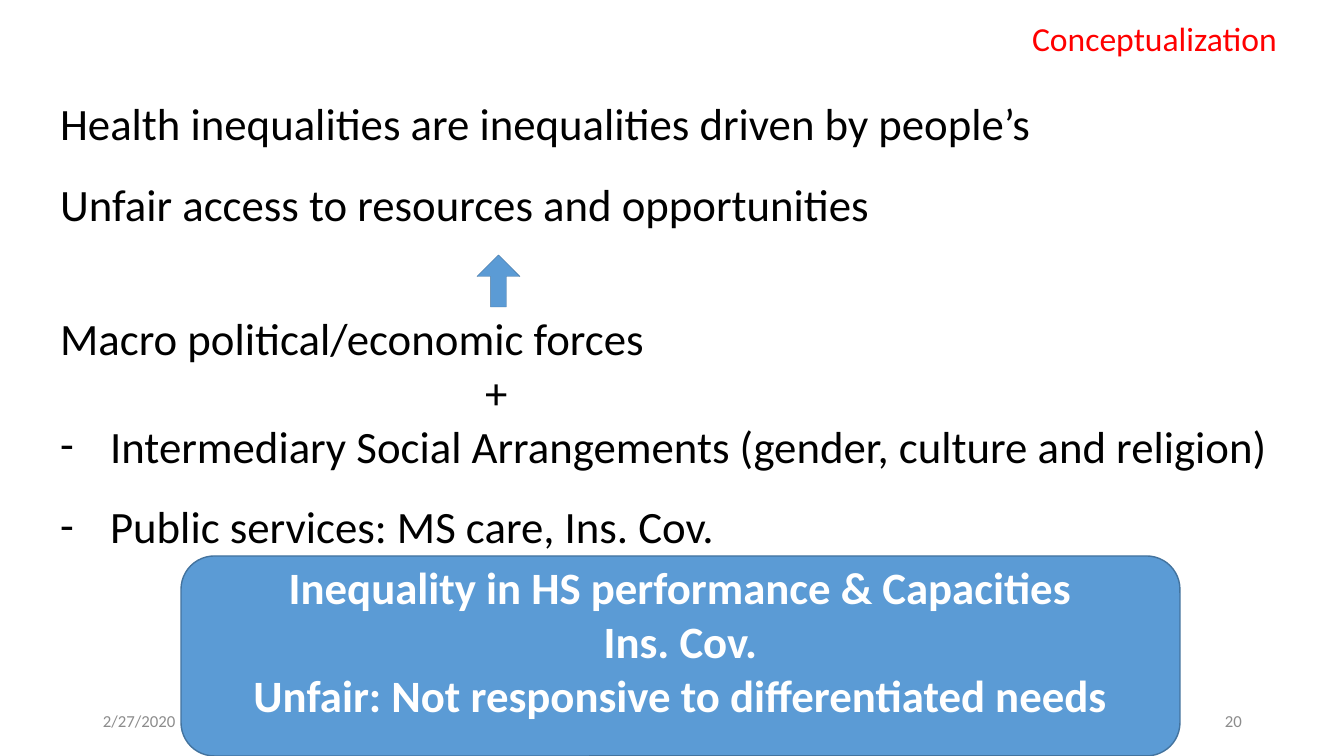
from lxml.etree import SubElement
from pptx import Presentation
from pptx.dml.color import RGBColor
from pptx.enum.shapes import MSO_SHAPE as Preset
from pptx.enum.text import MSO_ANCHOR as Anchor, MSO_AUTO_SIZE as AutoSize, PP_ALIGN as Align
from pptx.oxml.ns import qn
from pptx.util import Emu, Pt

EMU_PER_PX = 914400 / 100.8
FONT = "Calibri"
BLACK, WHITE, RED, GREY = "000000", "FFFFFF", "FF0000", "8C8C8C"
BLUE, BLUE_EDGE = "5B9BD5", "43739E"
STATEMENTS = [
    ("Health inequalities are inequalities driven by people’s", {"line_spacing": 1.5}),
    ("Unfair access to resources and opportunities", {"line_spacing": 1.5}),
    ("Macro political/economic forces", {"space_before": Pt(57.5)}),
    ("+", {"margin": 425}),
    ("Intermediary Social Arrangements (gender, culture and religion)", {"bullet": "-"}),
    ("Public services: MS care, Ins. Cov.", {"bullet": "-", "line_spacing": 1.5}),
]
CONCLUSIONS = [
    "Inequality in HS performance & Capacities",
    "Ins. Cov.",
    "Unfair: Not responsive to differentiated needs",
]


def px(length):
    return Emu(round(length * EMU_PER_PX))


def color(hex_string):
    return RGBColor.from_string(hex_string)


def set_all(target, values):
    for name, value in values.items():
        setattr(target, name, value)


def place(shape, box):
    set_all(shape, dict(zip(("left", "top", "width", "height"), map(px, box))))


def set_indent(paragraph, margin=0, bullet=None):
    """Set the left margin in px, with an optional hanging bullet character."""
    properties = paragraph._p.get_or_add_pPr()
    hang = 50 if bullet else 0
    properties.set("marL", str(px(margin + hang)))
    properties.set("indent", str(px(-hang)))
    if bullet:
        SubElement(properties, qn("a:buFont")).set("typeface", FONT)
        SubElement(properties, qn("a:buChar")).set("char", bullet)
    else:
        SubElement(properties, qn("a:buNone"))


def write(shape, items, size, hex_color, bold=False, align=Align.LEFT, **frame_format):
    """Fill a shape with (text, paragraph format) pairs in one character style."""
    frame = shape.text_frame
    set_all(frame, {"word_wrap": True, "auto_size": AutoSize.NONE,
                    "vertical_anchor": Anchor.TOP, **frame_format})
    for index, (text, extra) in enumerate(items):
        paragraph = frame.add_paragraph() if index else frame.paragraphs[0]
        values = {"alignment": align, "line_spacing": 1.0,
                  "space_before": Pt(0), "space_after": Pt(0), **extra}
        margin, bullet = values.pop("margin", 0), values.pop("bullet", None)
        set_all(paragraph, values)
        set_indent(paragraph, margin, bullet)
        run = paragraph.add_run()
        run.text = text
        set_all(run.font, {"name": FONT, "size": Pt(size), "bold": bold})
        run.font.color.rgb = color(hex_color)


def add_blue_shape(slide, preset, box, line_width):
    shape = slide.shapes.add_shape(preset, *map(px, box))
    shape.shadow.inherit = False
    shape.fill.solid()
    shape.fill.fore_color.rgb = color(BLUE)
    shape.line.color.rgb = color(BLUE_EDGE)
    shape.line.width = Pt(line_width)
    return shape


def add_heading(slide, box):
    place(slide.shapes.title, box)
    write(slide.shapes.title, [("Conceptualization", {})], 24, RED)


def add_argument(slide, box):
    """Place the statements and the arrow that leads up between them."""
    body = slide.placeholders[1]
    place(body, box)
    write(body, STATEMENTS, 32, BLACK)
    left, top = box[:2]
    arrow = add_blue_shape(slide, Preset.UP_ARROW, (left + 427, top + 191, 43, 52), 0.25)
    arrow.adjustments[0] = 0.365


def add_conclusion(slide, box):
    panel = add_blue_shape(slide, Preset.ROUNDED_RECTANGLE, box, 1)
    write(panel, [(text, {}) for text in CONCLUSIONS], 32, WHITE, True, Align.CENTER,
          vertical_anchor=Anchor.MIDDLE, margin_bottom=px(36))


def add_footer(slide, box):
    left, top, width, height = box
    part_width = 302
    for text, part_left, align in (("2/27/2020", left, Align.LEFT),
                                   ("20", left + width - part_width, Align.RIGHT)):
        part = slide.shapes.add_textbox(*map(px, (part_left, top, part_width, height)))
        write(part, [(text, {})], 12, GREY, align=align, vertical_anchor=Anchor.MIDDLE)


def main():
    presentation = Presentation()
    set_all(presentation, {"slide_width": px(1344), "slide_height": px(756)})
    slide = presentation.slides.add_slide(presentation.slide_layouts[1])
    add_argument(slide, (50, 64, 1269, 692))
    add_heading(slide, (1022, 13, 355, 50))
    add_conclusion(slide, (181, 556, 999, 200))
    add_footer(slide, (93, 701, 1159, 40))
    presentation.save("out.pptx")


if __name__ == "__main__":
    main()
